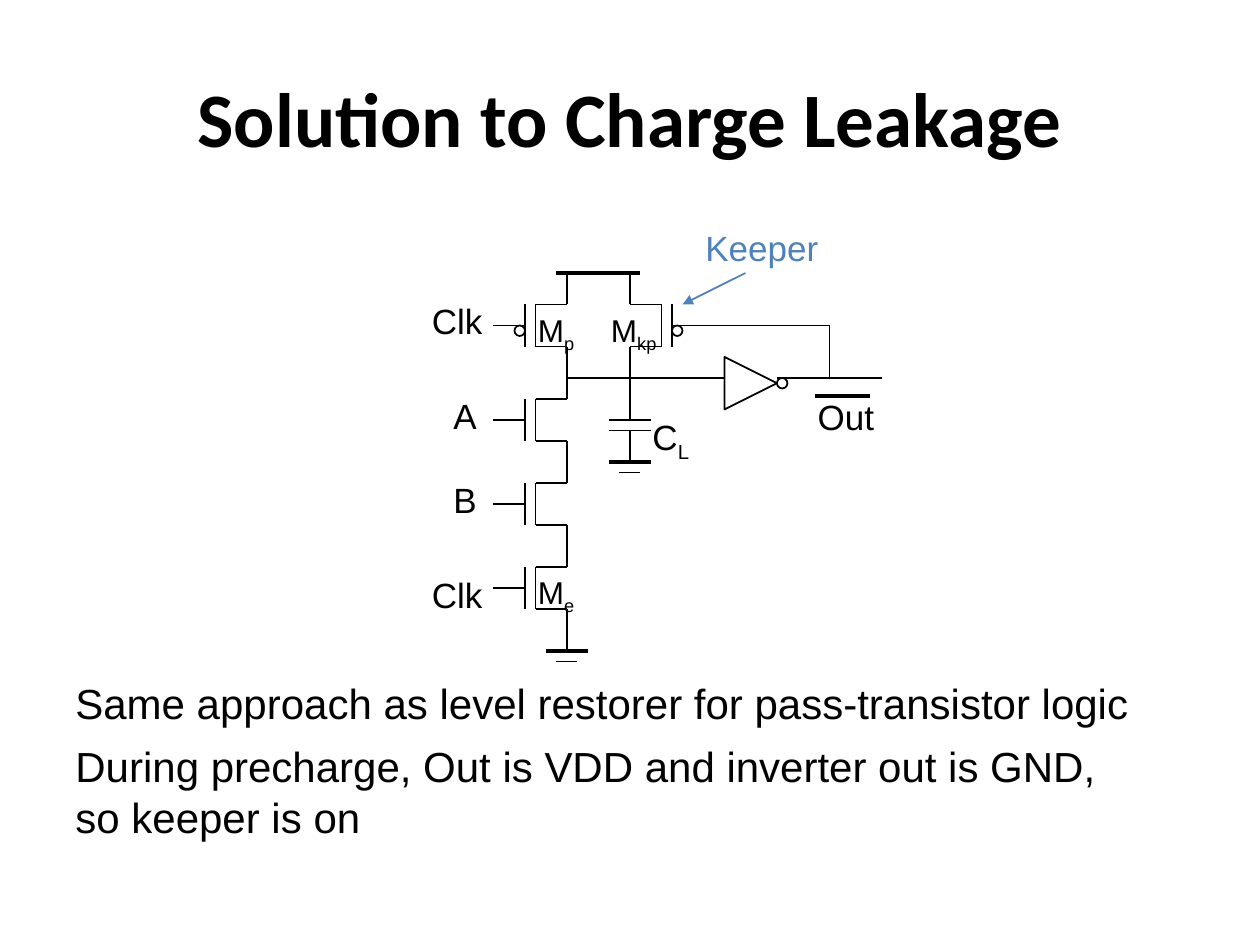
from lxml import etree
from pptx import Presentation
from pptx.dml.color import RGBColor
from pptx.enum import shapes, text
from pptx.oxml import ns
from pptx.util import Inches, Pt

BLACK = RGBColor(0x00, 0x00, 0x00)
BLUE = RGBColor(0x4F, 0x81, 0xBD)
THIN, THICK = 1, 2.25


def grid(steps):
    """The circuit sits on a grid of twelve steps to the inch."""
    return Inches(steps / 12)


def add_line(page, start, end, width=THIN, color=BLACK, arrow=False):
    line = page.shapes.add_connector(
        shapes.MSO_CONNECTOR.STRAIGHT, *map(grid, start + end))
    line.line.width = Pt(width)
    line.line.color.rgb = color
    properties = line._element.spPr
    if arrow:
        etree.SubElement(line.line._get_or_add_ln(), ns.qn("a:tailEnd"), type="triangle")
    etree.SubElement(properties, ns.qn("a:effectLst"))


def add_outline(page, kind, left, top, size, rotation=0):
    outline = page.shapes.add_shape(kind, *map(grid, (left, top, size, size)))
    outline.rotation = rotation
    outline.shadow.inherit = False
    outline.fill.background()
    outline.line.color.rgb = BLACK
    outline.line.width = Pt(THIN)


def add_bubble(page, left, top):
    add_outline(page, shapes.MSO_SHAPE.OVAL, left, top, 1)


def add_span(para, words, size, color=BLACK, name="Arial", bold=False):
    span = para.add_run()
    span.text = words
    for key, value in {"size": Pt(size), "name": name, "bold": bold}.items():
        setattr(span.font, key, value)
    span.font.color.rgb = color
    return span


def add_box(page, left, top, width, height, **frame_format):
    box = page.shapes.add_textbox(*map(Inches, (left, top, width, height)))
    for key, value in frame_format.items():
        setattr(box.text_frame, key, value)
    return box.text_frame


def add_label(page, left, top, width, words, subscript="", size=20, color=BLACK):
    height = 0.43 if size == 20 else 0.4
    frame = add_box(page, left, top, width, height, word_wrap=False,
                    auto_size=text.MSO_AUTO_SIZE.SHAPE_TO_FIT_TEXT)
    para = frame.paragraphs[0]
    add_span(para, words, size, color)
    if subscript:
        span = add_span(para, subscript, size, color)
        span.font._element.set("baseline", "-25000")


def add_transistor(page, x, top, side=1, pmos=False):
    """Draw the gate to the left of x (side 1) or to the right (side -1)."""
    bottom, middle = top + 4, top + 2
    channel, gate, lead = x - 3 * side, x - 4 * side, x - 7 * side
    for start, end in (
        ((channel, top), (x, top)),
        ((channel, top), (channel, bottom)),
        ((channel, bottom), (x, bottom)),
        ((gate, top), (gate, bottom)),
        ((x, bottom), (x, bottom + 3)),
        ((lead, middle), (gate, middle)),
        ((x, top - 3), (x, top)),
    ):
        add_line(page, start, end)
    if pmos:
        add_bubble(page, min(gate, gate - side), middle)


def add_ground(page, x, y):
    add_line(page, (x, y - 3), (x, y))
    add_line(page, (x - 2, y), (x + 2, y), THICK)
    add_line(page, (x - 1, y + 1), (x + 1, y + 1))


def add_capacitor(page, x, top):
    add_line(page, (x, top), (x, top + 4))
    for plate in (top + 4, top + 5):
        add_line(page, (x - 2, plate), (x + 2, plate))
    add_ground(page, x, top + 8)


def add_inverter(page, left, top):
    add_outline(page, shapes.MSO_SHAPE.ISOSCELES_TRIANGLE, left, top, 5, 90)
    add_bubble(page, left + 5, top + 2)


def add_title(page, words):
    frame = add_box(page, 0.5, 0.3, 9, 1.25, word_wrap=True,
                    vertical_anchor=text.MSO_ANCHOR.MIDDLE)
    para = frame.paragraphs[0]
    para.alignment = text.PP_ALIGN.CENTER
    add_span(para, words, 44, name="Calibri", bold=True)


def add_notes_text(page, sentences):
    frame = add_box(page, 0.5, 5.33, 8.72, 1.43, word_wrap=True)
    for index, sentence in enumerate(sentences):
        para = frame.add_paragraph() if index else frame.paragraphs[0]
        if index:
            para.space_before = Pt(7.2)
        add_span(para, sentence, 24)


def main():
    deck = Presentation()
    deck.slide_width, deck.slide_height = Inches(10), Inches(7.5)
    page = deck.slides.add_slide(deck.slide_layouts[6])
    add_title(page, "Solution to Charge Leakage")

    # Transistor stack and keeper
    stack, keeper = 54, 60
    add_transistor(page, stack, 29, pmos=True)
    for top in (38, 46, 54):
        add_transistor(page, stack, top)
    add_transistor(page, keeper, 29, side=-1, pmos=True)
    add_ground(page, stack, 62)

    # Supply rail, output node and feedback
    add_line(page, (53, 26), (61, 26), THICK)
    add_line(page, (stack, 36), (69, 36))
    add_inverter(page, 69, 34)
    add_line(page, (74, 36), (84, 36))
    add_line(page, (66, 31), (79, 31))
    add_line(page, (79, 31), (79, 36))
    add_capacitor(page, keeper, 36)

    # Signal and device labels
    for label in (
        (3.33, 2.33, 0.6, "Clk"),
        (3.5, 3.08, 0.39, "A"),
        (3.5, 3.75, 0.39, "B"),
        (3.33, 4.5, 0.6, "Clk"),
        (6.39, 3.09, 0.65, "Out"),
        (5.08, 3.25, 0.5, "C", "L"),
        (4.17, 2.42, 0.5, "M", "p", 18),
        (4.75, 2.42, 0.59, "M", "kp", 18),
        (4.17, 4.5, 0.5, "M", "e", 18),
        (5.5, 1.75, 1.1, "Keeper", "", 20, BLUE),
    ):
        add_label(page, *label)

    # Keeper pointer and the bar over Out
    add_line(page, (71, 26), (65, 29), color=BLUE, arrow=True)
    add_line(page, (77.6, 37.7), (82.9, 37.7), THICK)

    add_notes_text(page, (
        "Same approach as level restorer for pass-transistor logic",
        "During precharge, Out is VDD and inverter out is GND, so keeper is on",
    ))
    deck.save("out.pptx")


if __name__ == "__main__":
    main()
